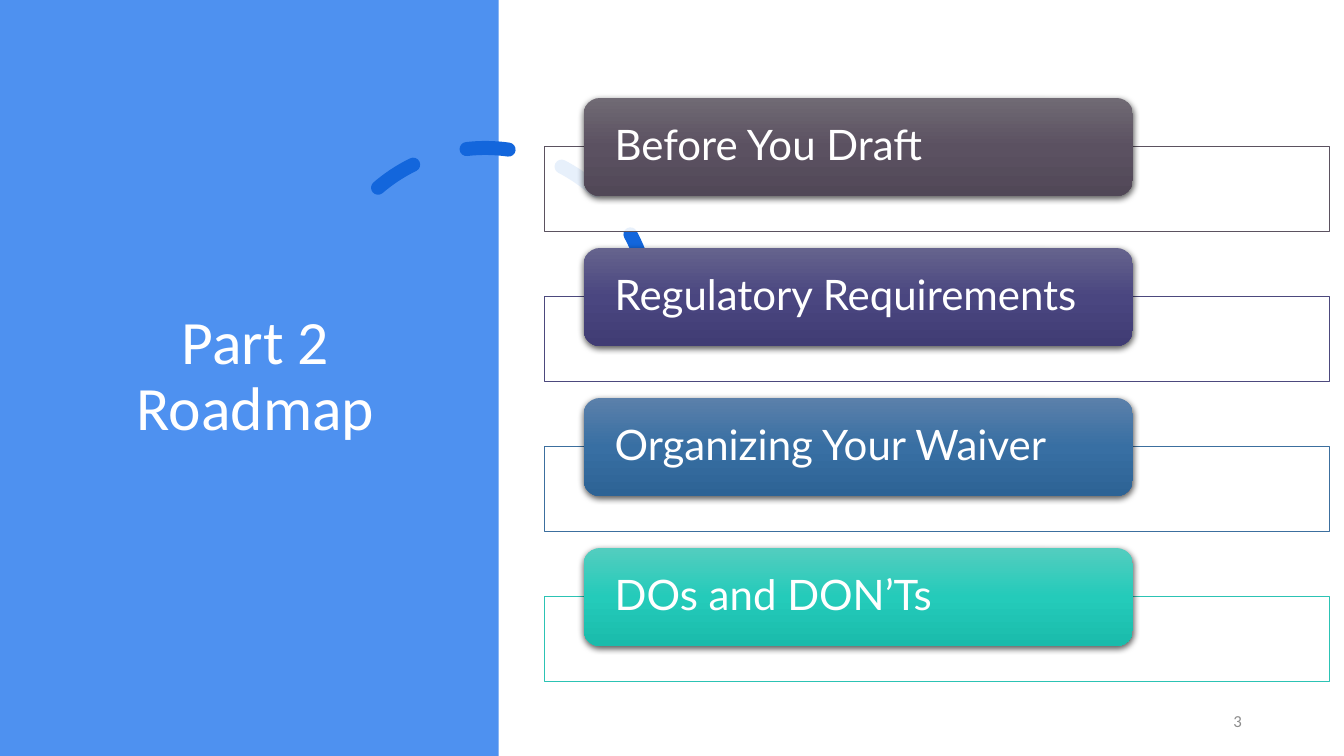
"""Build the Part 2 roadmap slide with four stacked topics."""
from lxml.etree import SubElement
from pptx import Presentation
from pptx.dml.color import RGBColor
from pptx.enum.dml import MSO_LINE
from pptx.enum.shapes import MSO_SHAPE
from pptx.enum.text import MSO_ANCHOR, PP_ALIGN
from pptx.oxml import parse_xml
from pptx.oxml.ns import nsdecls, qn
from pptx.util import Cm, Pt

COLORS = {"white": "FFFFFF", "panel": "4E91F0", "arc": "1366DC", "number": "8C8C8C", "shadow": "000000"}
TOPICS = [
    ("Before You Draft", "5B5260", ("706A74", "5B5161", "514857")),
    ("Regulatory Requirements", "4C497D", ("65638D", "4A4680", "403C74")),
    ("Organizing Your Waiver", "3C6F9E", ("5B80AA", "386FA3", "2D6395")),
    ("DOs and DON’Ts", "2CC3B4", ("53CDBF", "24CBBA", "1ABBAB")),
]
ROW_STEP = 3.78


def add_shape(kind, left, top, width, height, fill=None, line=None, weight=0.5):
    shape = page.shapes.add_shape(kind, Cm(left), Cm(top), Cm(width), Cm(height))
    shape.shadow.inherit = False
    if fill:
        shape.fill.solid()
        shape.fill.fore_color.rgb = RGBColor.from_string(fill)
    else:
        shape.fill.background()
    if line:
        shape.line.color.rgb = RGBColor.from_string(line)
        shape.line.width = Pt(weight)
    else:
        shape.line.fill.background()
    return shape


def write_text(box, text, size, font="Calibri", color=COLORS["white"],
               align=PP_ALIGN.LEFT, spacing=0.9, inset=0.25):
    frame = box.text_frame
    frame.word_wrap = True
    frame.vertical_anchor = MSO_ANCHOR.MIDDLE
    frame.margin_left = frame.margin_right = Cm(inset)
    para = frame.paragraphs[0]
    para.alignment = align
    para.line_spacing = spacing
    span = para.add_run()
    span.text = text
    span.font.size = Pt(size)
    span.font.name = font
    span.font.color.rgb = RGBColor.from_string(color)


deck = Presentation()
deck.slide_width, deck.slide_height = Cm(33.87), Cm(19.05)
page = deck.slides.add_slide(deck.slide_layouts[6])

add_shape(MSO_SHAPE.RECTANGLE, 0, 0, 12.57, 19.05, fill=COLORS["panel"])

arc = add_shape(MSO_SHAPE.ARC, 8.08, 3.73, 8.31, 8.31, line=COLORS["arc"], weight=10)
arc.adjustments[0] = 146.13
arc.adjustments[1] = 0
arc.rotation = 345.8
arc.line.dash_style = MSO_LINE.DASH
arc.line._get_or_add_ln().set("cap", "rnd")

title = page.shapes.add_textbox(Cm(2.34), Cm(1.78), Cm(8.2), Cm(15.47))
write_text(title, "Part 2 Roadmap", 44, align=PP_ALIGN.CENTER)

number = page.shapes.add_textbox(Cm(26.85), Cm(17.65), Cm(4.7), Cm(1.02))
write_text(number, "3", 12, color=COLORS["number"], align=PP_ALIGN.RIGHT, spacing=1.0)

for row, (topic, outline, shades) in enumerate(TOPICS):
    offset = row * ROW_STEP
    frame_box = add_shape(MSO_SHAPE.RECTANGLE, 13.72, 3.7 + offset, 19.78, 2.12,
                          fill=COLORS["white"], line=outline)
    frame_color = frame_box._element.spPr.find(qn("a:solidFill")).find(qn("a:srgbClr"))
    SubElement(frame_color, qn("a:alpha"), val="90000")

    pill = add_shape(MSO_SHAPE.ROUNDED_RECTANGLE, 14.71, 2.47 + offset, 13.84, 2.47)
    properties = pill._element.spPr
    stops = "".join(
        f'<a:gs pos="{index * 50000}"><a:srgbClr val="{shade}"/></a:gs>'
        for index, shade in enumerate(shades)
    )
    gradient = parse_xml(
        f'<a:gradFill {nsdecls("a")} rotWithShape="1"><a:gsLst>{stops}</a:gsLst>'
        '<a:lin ang="5400000" scaled="0"/></a:gradFill>'
    )
    properties.replace(properties.find(qn("a:noFill")), gradient)
    properties.find(qn("a:effectLst")).append(parse_xml(
        f'<a:outerShdw {nsdecls("a")} blurRad="57150" dist="19050" dir="5400000" algn="ctr" '
        f'rotWithShape="0"><a:srgbClr val="{COLORS["shadow"]}"><a:alpha val="63000"/></a:srgbClr>'
        '</a:outerShdw>'
    ))
    write_text(pill, topic, 30, font="Lato", inset=0.66)

deck.save("out.pptx")
